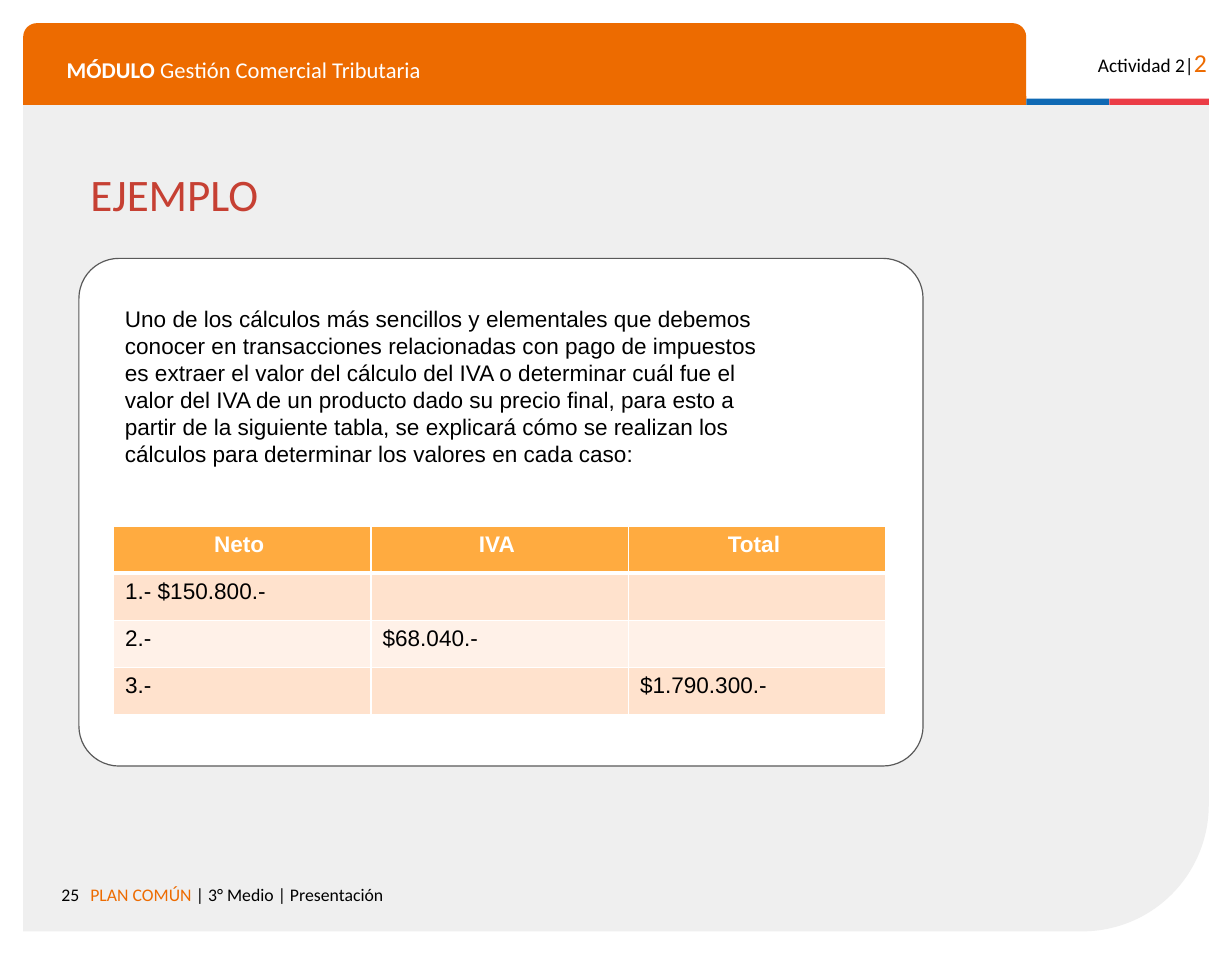
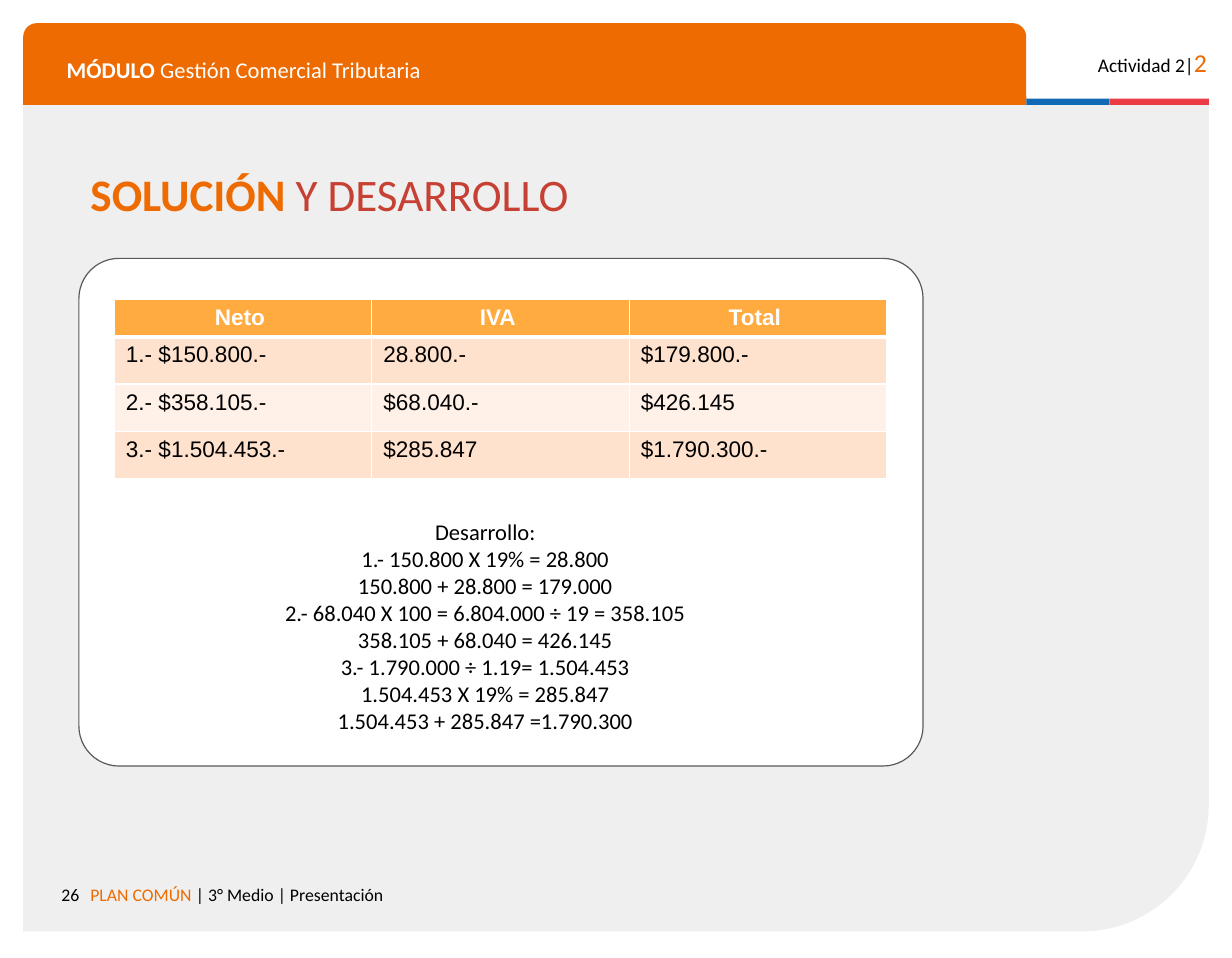
from collections import namedtuple

from pptx import Presentation
from pptx.dml.color import RGBColor
from pptx.enum.shapes import MSO_SHAPE
from pptx.enum.text import MSO_ANCHOR, MSO_AUTO_SIZE, PP_ALIGN
from pptx.oxml.ns import qn
from pptx.util import Inches, Pt
from lxml import etree

RECT = MSO_SHAPE.RECTANGLE
ROUND_RECT = MSO_SHAPE.ROUNDED_RECTANGLE
ROUND_ONE = MSO_SHAPE.ROUND_1_RECTANGLE
ROUND_TOP = MSO_SHAPE.ROUND_2_SAME_RECTANGLE
LEFT, CENTER, RIGHT = PP_ALIGN.LEFT, PP_ALIGN.CENTER, PP_ALIGN.RIGHT
TOP, MIDDLE = MSO_ANCHOR.TOP, MSO_ANCHOR.MIDDLE
NO_FIT = MSO_AUTO_SIZE.NONE

ORANGE = RGBColor(0xED, 0x6B, 0x00)
RED = RGBColor(0xC6, 0x40, 0x33)
FLAG_BLUE = RGBColor(0x0F, 0x69, 0xB4)
FLAG_RED = RGBColor(0xEB, 0x3C, 0x46)
PANEL_GRAY = RGBColor(0xEF, 0xEF, 0xEF)
LINE_GRAY = RGBColor(0x59, 0x59, 0x59)
HEAD_AMBER = RGBColor(0xFF, 0xAB, 0x40)
BANDS = RGBColor(0xFF, 0xF1, 0xE8), RGBColor(0xFF, 0xE2, 0xCD)
WHITE = RGBColor(0xFF, 0xFF, 0xFF)
BLACK = RGBColor(0, 0, 0)

Box = namedtuple("Box", "x y w h")
FRAME = Box(0.2, 0.2, 10.23, 7.84)
HEADINGS = ["Neto ", "IVA ", "Total "]


def part(box, x, y, w, h):
    """Box given in percent of another box."""
    return Box(box.x + box.w * x / 100, box.y + box.h * y / 100,
               box.w * w / 100, box.h * h / 100)


def emu(box):
    return [Inches(v) for v in box]


def write(tf, paragraphs, size=14, font="Calibri", color=BLACK, bold=False,
          align=LEFT, anchor=TOP, spacing=None, pad=0.1):
    tf.word_wrap = True
    tf.auto_size = NO_FIT
    tf.vertical_anchor = anchor
    tf.margin_left = tf.margin_right = Inches(0.1)
    tf.margin_top = tf.margin_bottom = Inches(pad)
    for i, runs in enumerate(paragraphs):
        p = tf.add_paragraph() if i else tf.paragraphs[0]
        p.alignment = align
        if spacing:
            p.line_spacing = spacing
        for text, fmt in runs:
            r = p.add_run()
            r.text = text
            r.font.name = font
            r.font.size = Pt(fmt.get("size", size))
            r.font.bold = fmt.get("bold", bold)
            r.font.color.rgb = fmt.get("color", color)


def add_text(s, box, paragraphs, **fmt):
    write(s.shapes.add_textbox(*emu(box)).text_frame, paragraphs, **fmt)


def add_block(s, kind, box, fill, line=None, adj=()):
    sp = s.shapes.add_shape(kind, *emu(box))
    sp.shadow.inherit = False
    sp.fill.solid()
    sp.fill.fore_color.rgb = fill
    if line is None:
        sp.line.fill.background()
    else:
        sp.line.color.rgb = line
        sp.line.width = Pt(0.75)
    for i, value in enumerate(adj):
        sp.adjustments[i] = value
    return sp


def add_frame(s, box, number):
    panel = add_block(s, ROUND_ONE, part(box, 0, 9, 100, 91), PANEL_GRAY, adj=[0.153])
    panel.rotation = 180
    panel._element.spPr.find(qn("a:xfrm")).set("flipH", "1")
    add_block(s, ROUND_TOP, part(box, 0, 0, 84.6, 9), ORANGE, adj=[0.167, 0])
    add_block(s, RECT, part(box, 84.6, 8.3, 7, 0.7), FLAG_BLUE)
    add_block(s, RECT, part(box, 91.6, 8.3, 8.4, 0.7), FLAG_RED)
    add_text(s, part(box, 2.7, 2.3, 79.6, 4.5),
             [[("MÓDULO", {"bold": True}), (" Gestión Comercial Tributaria", {})]],
             color=WHITE)
    add_text(s, part(box, 88.3, 1.3, 12.5, 4.8),
             [[("Actividad 2|", {}), ("2", {"size": 16, "color": ORANGE})]],
             size=12, align=RIGHT)
    add_text(s, part(box, 0, 93.5, 5.7, 3.7), [[(str(number), {})]],
             size=11, align=RIGHT)
    add_text(s, part(box, 4.7, 93.5, 72.5, 4.8),
             [[("PLAN COMÚN ", {"color": ORANGE}), ("| 3° Medio | Presentación", {})]],
             size=11)


def set_title(s, box, runs):
    title = s.shapes.title
    s.shapes._spTree.append(title._element)
    title.left, title.top, title.width, title.height = emu(box)
    write(title.text_frame, [runs], size=28, color=RED, anchor=MIDDLE, spacing=0.8)


def set_borders(cell, bottom):
    tc_pr = cell._tc.get_or_add_tcPr()
    for side, width in (("L", 1), ("R", 1), ("T", 1), ("B", bottom)):
        ln = etree.SubElement(tc_pr, qn(f"a:ln{side}"), w=str(Pt(width)))
        fill = etree.SubElement(ln, qn("a:solidFill"))
        etree.SubElement(fill, qn("a:srgbClr"), val=str(WHITE))


def add_tax_table(s, box, rows, head_share):
    data = [HEADINGS] + rows
    table = s.shapes.add_table(len(data), len(HEADINGS), *emu(box)).table
    for col in table.columns:
        col.width = Inches(box.w / len(HEADINGS))
    head_height = box.h * head_share
    for i, values in enumerate(data):
        height = (box.h - head_height) / len(rows) if i else head_height
        table.rows[i].height = Inches(height)
        for j, value in enumerate(values):
            cell = table.cell(i, j)
            set_borders(cell, 1 if i else 3)
            cell.fill.solid()
            cell.fill.fore_color.rgb = BANDS[i % 2] if i else HEAD_AMBER
            if value:
                write(cell.text_frame, [[(value, {})]], font="Arial", pad=0.05,
                      color=BLACK if i else WHITE, bold=i == 0,
                      align=LEFT if i else CENTER)


def add_card_slide(prs, number, title_runs):
    s = prs.slides.add_slide(prs.slide_layouts[5])
    add_frame(s, FRAME, number)
    set_title(s, part(FRAME, 4.7, 17.1, 95.7, 4.5), title_runs)
    card = part(FRAME, 4.7, 25.9, 71.2, 55.9)
    add_block(s, ROUND_RECT, card, WHITE, line=LINE_GRAY, adj=[0.079])
    return s, card


def add_example(prs):
    s, card = add_card_slide(prs, 25, [("EJEMPLO", {})])
    intro = (
        "Uno de los cálculos más sencillos y elementales que debemos conocer en "
        "transacciones relacionadas con pago de impuestos es extraer el valor del "
        "cálculo del IVA o determinar cuál fue el valor del IVA de un producto dado "
        "su precio final, para esto a partir de la siguiente tabla, se explicará "
        "cómo se realizan los cálculos para determinar los valores en cada caso:")
    add_text(s, part(card, 4.1, 8, 77.9, 34.5), [[(intro, {})]], font="Arial", pad=0.05)
    add_tax_table(s, part(card, 4.1, 52.7, 91.5, 37.2), [
        ["1.- $150.800.-", "", ""],
        ["2.-", "$68.040.-", ""],
        ["3.-", "", "$1.790.300.-"],
    ], head_share=0.25)


def add_solution(prs):
    s, card = add_card_slide(prs, 26, [
        ("SOLUCIÓN", {"color": ORANGE, "bold": True}), (" Y DESARROLLO", {})])
    add_tax_table(s, part(card, 4.2, 8, 91.5, 35.4), [
        ["1.- $150.800.-", "28.800.-", "$179.800.-"],
        ["2.- $358.105.-", "$68.040.-", "$426.145"],
        ["3.- $1.504.453.-", "$285.847", "$1.790.300.-"],
    ], head_share=0.21)
    steps = [
        "Desarrollo:",
        "1.- 150.800 X 19% = 28.800",
        "150.800 + 28.800 = 179.000",
        "2.- 68.040 X 100 = 6.804.000 ÷ 19 = 358.105",
        "358.105 + 68.040 = 426.145",
        "3.- 1.790.000 ÷ 1.19= 1.504.453",
        "1.504.453 X 19% = 285.847",
        "1.504.453 + 285.847 =1.790.300",
    ]
    add_text(s, part(card, 9.2, 50, 77.9, 45.4), [[(step, {})] for step in steps],
             align=CENTER, pad=0.05)


def main():
    prs = Presentation()
    prs.slide_width, prs.slide_height = Inches(10.63), Inches(8.27)
    add_example(prs)
    add_solution(prs)
    prs.save("out.pptx")


if __name__ == "__main__":
    main()
